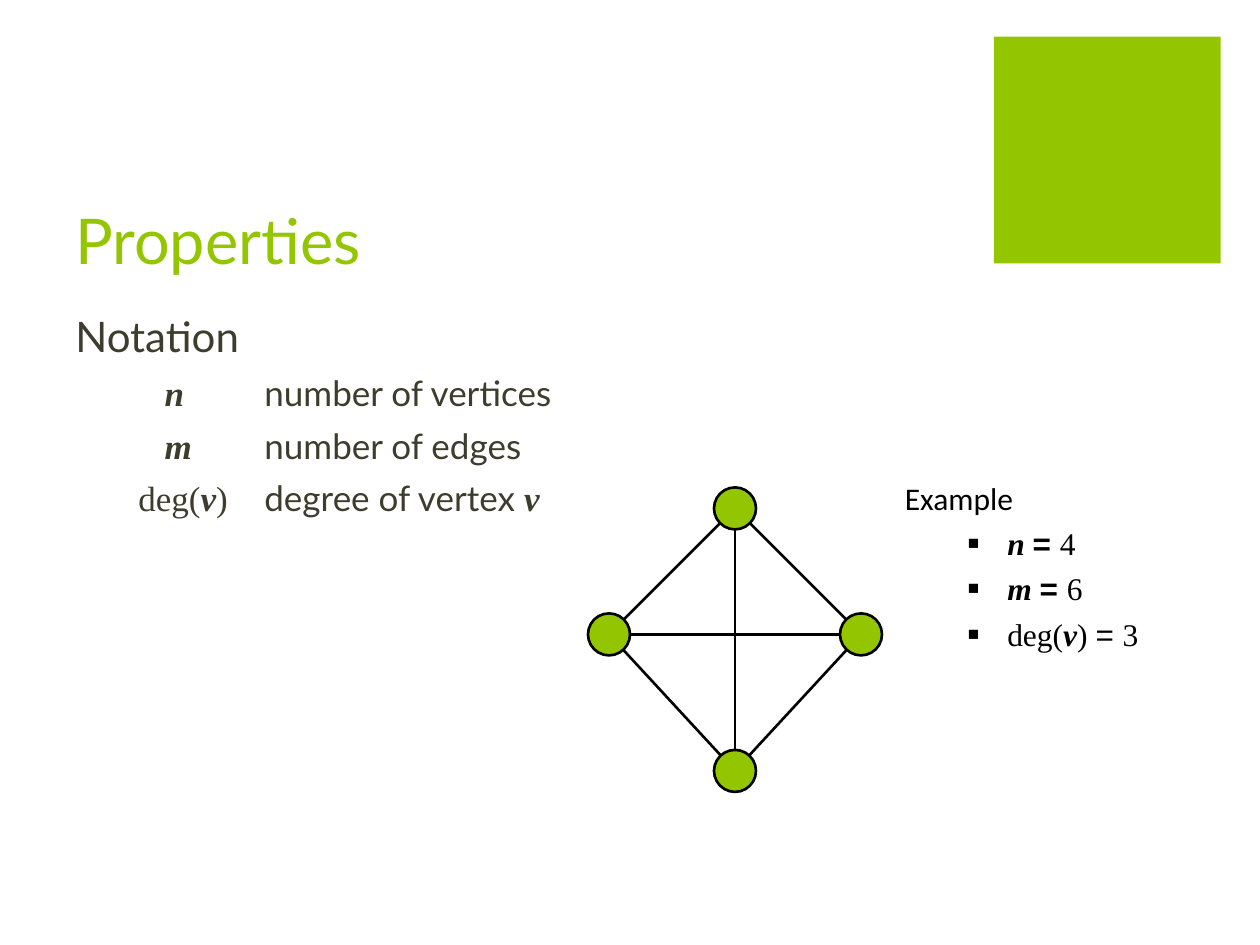
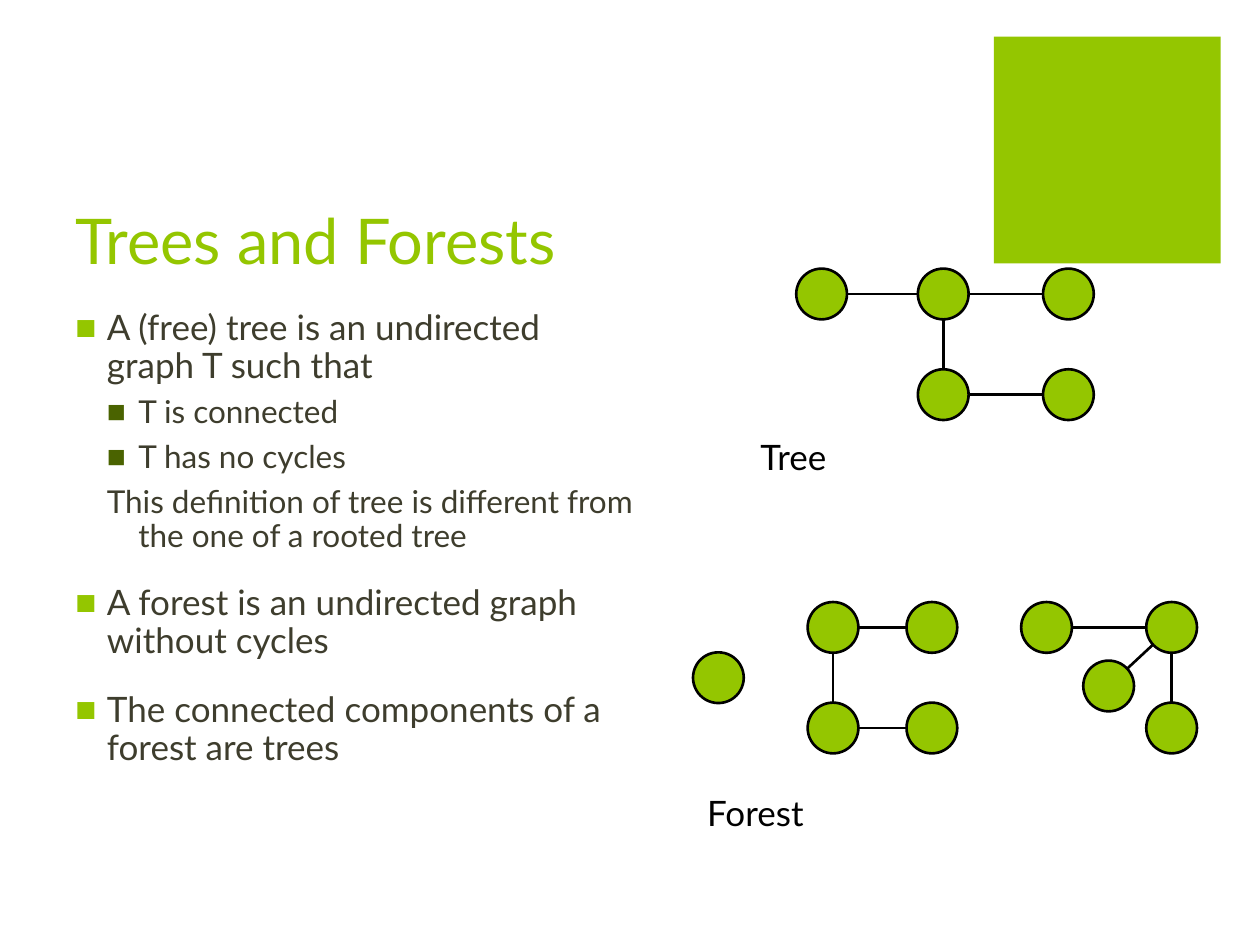
"""Builds two slides on graph properties, trees and forests."""
import math
import lxml.etree
import pptx
import pptx.dml.color
import pptx.enum.shapes
import pptx.enum.text
import pptx.oxml.ns
import pptx.util

Pt = pptx.util.Pt
qn = pptx.oxml.ns.qn
GREEN, MOSS, DARK, BLACK = "94C600", "4A6300", "3E3D2D", "000000"
SANS, SERIF = "Lato", "Times New Roman"
STYLES = {
    "sans": (SANS, False, False),
    "serif": (SERIF, False, False),
    "var": (SERIF, True, True),
    "sign": ("Arial", False, False),
    "bold": ("Arial", True, False),
}


def color(code):
    """Turn a hex string into a colour."""
    return pptx.dml.color.RGBColor.from_string(code)


def bullet(props, tint, scale):
    """Give a paragraph a square bullet."""
    for tag, key, value in (("buSzPct", "val", str(scale * 1000)),
                            ("buFont", "typeface", "Arial"),
                            ("buChar", "char", "■")):
        lxml.etree.SubElement(props, qn("a:" + tag)).set(key, value)
    clr = lxml.etree.Element(qn("a:buClr"))
    lxml.etree.SubElement(clr, qn("a:srgbClr")).set("val", tint)
    props.find(qn("a:buSzPct")).addprevious(clr)


def frame(slide, box):
    """Add an empty wrapping text box."""
    text = slide.shapes.add_textbox(*map(Pt, box)).text_frame
    text.word_wrap = True
    return text


def write(para, runs, size, tint, face=SANS, left=0, hang=0, before=0,
          line=None, mark=None, scale=100):
    """Fill one paragraph with a string or with styled runs."""
    props = para._p.get_or_add_pPr()
    props.set("marL", str(Pt(left)))
    props.set("indent", str(Pt(-hang)))
    para.space_before = Pt(before)
    if line:
        para.line_spacing = line
    if mark:
        bullet(props, mark, scale)
    font = para.font
    font.size, font.color.rgb = Pt(size), color(tint)
    if isinstance(runs, str):
        font.name = face
        para.add_run().text = runs
        return
    for words, style in runs:
        run = para.add_run()
        run.text = words
        run.font.name, run.font.bold, run.font.italic = STYLES[style]


def fill(slide, box, rows):
    """Write rows of paragraph settings into one text box."""
    text = frame(slide, box)
    for i, row in enumerate(rows):
        write(text.add_paragraph() if i else text.paragraphs[0], **row)


def shape(slide, kind, box):
    """Add a flat green preset shape without an outline."""
    item = slide.shapes.add_shape(kind, *map(Pt, box))
    item.shadow.inherit = False
    item.fill.solid()
    item.fill.fore_color.rgb = color(GREEN)
    item.line.fill.background()
    return item


def ink(line):
    """Draw a line in the black graph stroke."""
    line.color.rgb = color(BLACK)
    line.width = Pt(1.5)


def graph(slide, left, top, size, nodes, edges):
    """Draw round vertices and join them rim to rim."""
    for x, y in nodes:
        oval = shape(slide, pptx.enum.shapes.MSO_SHAPE.OVAL,
                     (left + x, top + y, size, size))
        ink(oval.line)
    half = size / 2
    for a, b in edges:
        (x1, y1), (x2, y2) = nodes[a], nodes[b]
        gap = half / math.dist(nodes[a], nodes[b])
        dx, dy = (x2 - x1) * gap, (y2 - y1) * gap
        ends = (left + half + x1 + dx, top + half + y1 + dy,
                left + half + x2 - dx, top + half + y2 - dy)
        link = slide.shapes.add_connector(
            pptx.enum.shapes.MSO_CONNECTOR.STRAIGHT, *map(Pt, ends))
        lxml.etree.SubElement(link._element.spPr, qn("a:effectLst"))
        ink(link.line)


def base(deck, title):
    """Add a blank slide with the green square and a title."""
    slide = deck.slides.add_slide(deck.slide_layouts[6])
    shape(slide, pptx.enum.shapes.MSO_SHAPE.RECTANGLE, (568, 21, 129.6, 129.6))
    text = frame(slide, (36, 72, 513, 90))
    text.vertical_anchor = pptx.enum.text.MSO_ANCHOR.BOTTOM
    write(text.paragraphs[0], title, 36, GREEN)
    return slide


def terms(slide, box):
    """List the notation in two tabbed columns."""
    rows = [dict(runs="Notation", size=24, tint=DARK, left=9, hang=9)]
    for runs, hang in (
            ([("n\t", "var"), ("number of vertices", "sans")], 57),
            ([("m\t", "var"), ("number of edges", "sans")], 57),
            ([("deg(", "serif"), ("v", "var"), (")\t", "serif"),
              ("degree of vertex ", "sans"), ("v", "var")], 72)):
        rows.append(dict(runs=runs, size=20, tint=DARK, left=108,
                         hang=hang, before=6))
    fill(slide, box, rows)


def sample(slide, box):
    """List the values of the example graph."""
    rows = [dict(runs="Example", size=18, tint=BLACK, face="Calibri",
                 left=27, hang=27)]
    for runs in ([("n ", "var"), ("= ", "bold"), ("4", "serif")],
                 [("m ", "var"), ("= ", "bold"), ("6", "serif")],
                 [("deg(", "serif"), ("v", "var"), (") ", "serif"),
                  ("= ", "sign"), ("3", "serif")]):
        rows.append(dict(runs=runs, size=18, tint=BLACK, left=58.5, hang=22.5,
                         before=4.3, mark=BLACK, scale=60))
    fill(slide, box, rows)


def facts(slide, box):
    """List the definitions of trees and forests."""
    main = dict(size=20, tint=DARK, left=18, hang=18, before=18, line=0.9,
                mark=GREEN)
    note = dict(main, size=18, left=36, before=6, mark=None)
    sub = dict(note, mark=MOSS)
    fill(slide, box, [dict(kind, runs=words) for kind, words in (
        (main, "A (free) tree is an undirected graph T such that"),
        (sub, "T is connected"),
        (sub, "T has no cycles"),
        (note, "This definition of tree is different from the one of "
               "a rooted tree"),
        (main, "A forest is an undirected graph without cycles"),
        (main, "The connected components of a forest are trees"))])


def label(slide, box, words):
    """Write a caption below a graph."""
    fill(slide, box, [dict(runs=words, size=20, tint=BLACK)])


def main():
    """Build both slides and save the deck."""
    deck = pptx.Presentation()
    deck.slide_width, deck.slide_height = Pt(720), Pt(540)

    slide = base(deck, "Properties")
    terms(slide, (36, 174, 513, 308))
    graph(slide, 336, 278.5, 24,
          [(0, 72), (72, 0), (72, 150), (144, 72)],
          [(1, 3), (1, 0), (2, 0), (3, 2), (3, 0), (2, 1)])
    sample(slide, (510, 270, 180, 144))

    slide = base(deck, "Trees and Forests")
    facts(slide, (36, 174, 333.5, 308))
    label(slide, (427.5, 245.5, 225, 31), "Tree")
    label(slide, (397, 448.5, 287, 31), "Forest")
    row = 57.5
    graph(slide, 455, 153.5, 29,
          [(0, 0), (69.5, 0), (141, 0), (69.5, row), (141, row)],
          [(0, 1), (1, 2), (1, 3), (3, 4)])
    graph(slide, 396, 344, 29,
          [(0, row / 2), (65.5, 0), (122, 0), (65.5, row), (122, row),
           (187.5, 0), (259, 0), (259, row), (223, 33.5)],
          [(1, 2), (1, 3), (3, 4), (5, 6), (6, 7), (6, 8)])
    deck.save("out.pptx")


if __name__ == "__main__":
    main()
